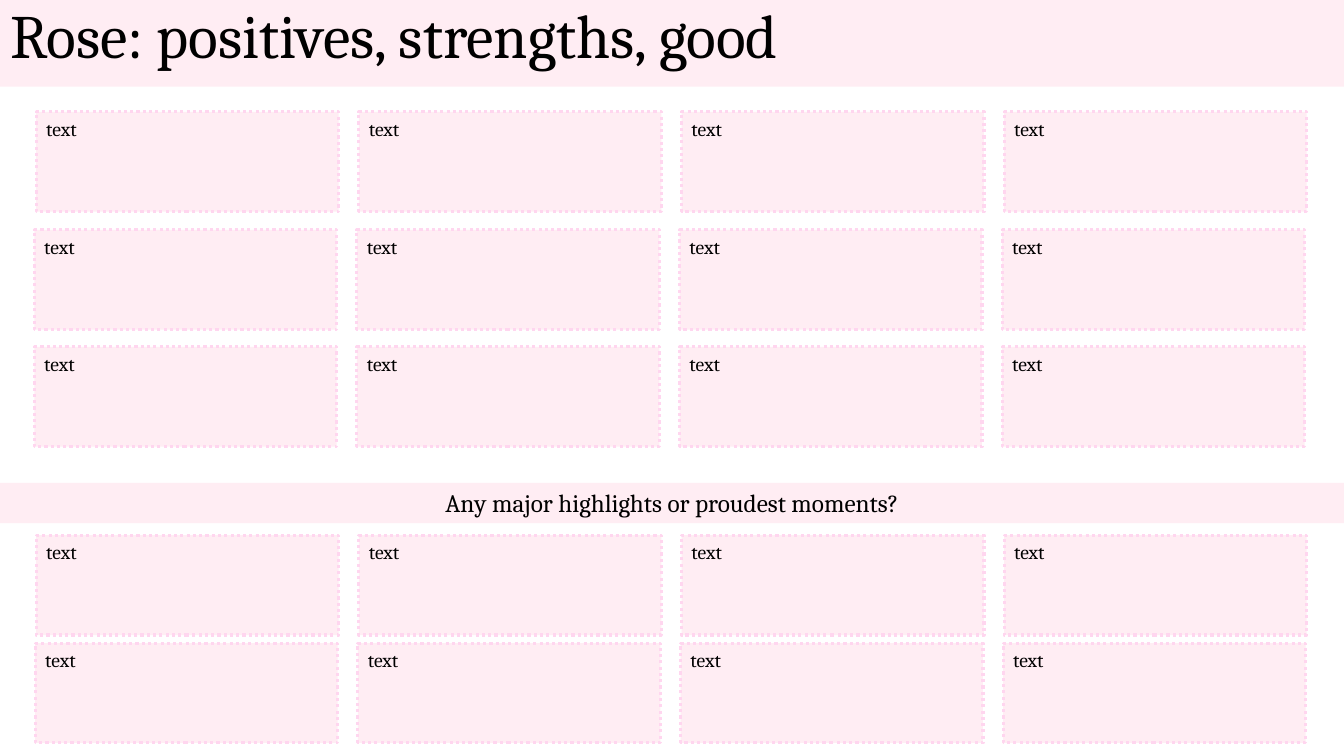
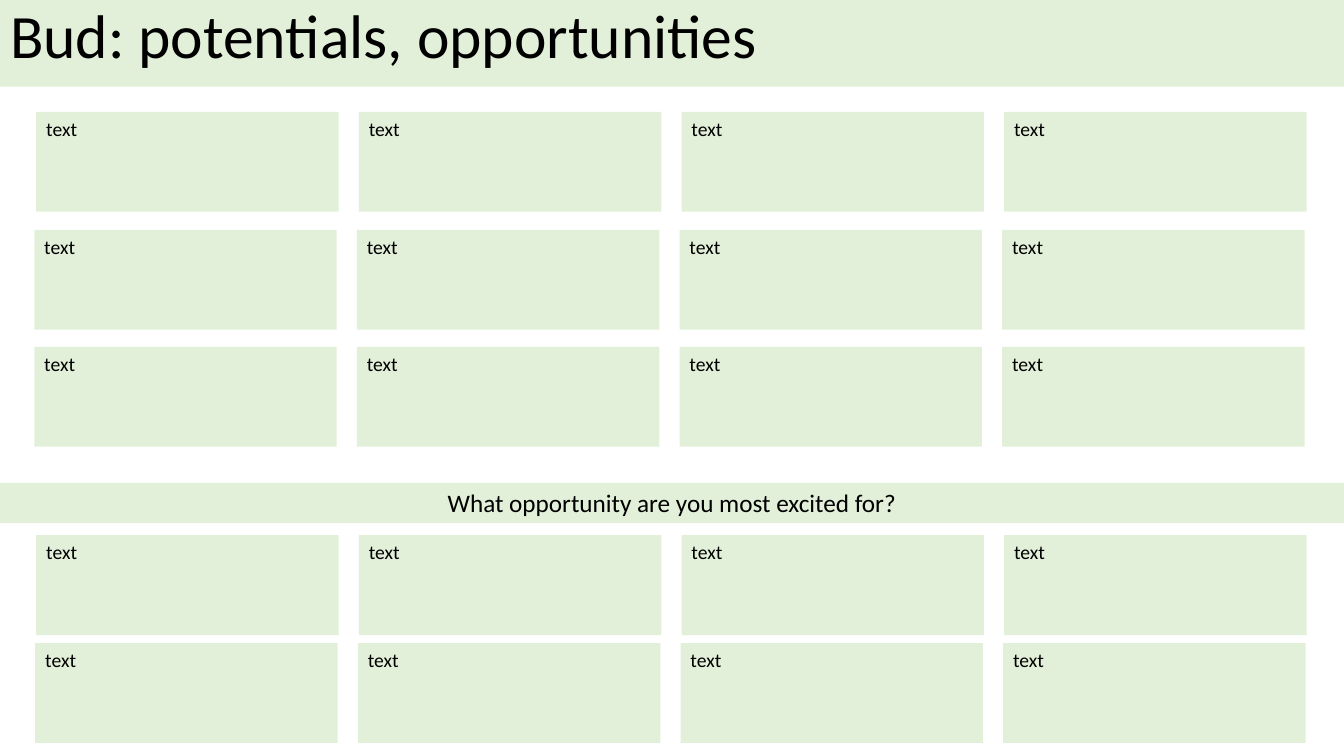
from dataclasses import dataclass

from pptx import Presentation
from pptx.dml.color import RGBColor
from pptx.enum.dml import MSO_LINE
from pptx.enum.shapes import MSO_SHAPE
from pptx.enum.text import MSO_ANCHOR, MSO_AUTO_SIZE, PP_ALIGN
from pptx.presentation import Presentation as PresentationType
from pptx.shapes.autoshape import Shape
from pptx.slide import Slide
from pptx.util import Inches, Pt

COLORS = {
    "text": "000000",
    "rose": "FFEDF3",
    "rose_border": "FFD6EF",
    "bud": "E2F0D9",
}
SLIDE_WIDTH, SLIDE_HEIGHT = 13.33, 7.5
TITLE_HEIGHT = 0.86
QUESTION_TOP, QUESTION_HEIGHT = 4.79, 0.4
CARD_WIDTH, CARD_HEIGHT = 3, 0.99
COLUMN_COUNT, COLUMN_STEP = 4, 3.2
TITLE_ONLY_LAYOUT = 5


@dataclass(frozen=True)
class CardRow:
    left: float
    top: float


@dataclass(frozen=True)
class Board:
    title: str
    question: str
    font: str
    fill: str
    border: str | None = None


IDEA_ROWS = [CardRow(0.36, 1.11), CardRow(0.34, 2.28), CardRow(0.34, 3.44)]
ANSWER_ROWS = [CardRow(0.36, 5.31), CardRow(0.35, 6.38)]
BOARDS = [
    Board(
        "Rose: positives, strengths, good",
        "Any major highlights or proudest moments?",
        "Cambria",
        "rose",
        "rose_border",
    ),
    Board(
        "Bud: potentials, opportunities",
        "What opportunity are you most excited for?",
        "Calibri",
        "bud",
    ),
]


def color(name: str) -> RGBColor:
    return RGBColor.from_string(COLORS[name])


def place(shape: Shape, left: float, top: float, width: float, height: float) -> None:
    shape.left, shape.top = Inches(left), Inches(top)
    shape.width, shape.height = Inches(width), Inches(height)


def write(
    shape: Shape,
    board: Board,
    text: str,
    size: int,
    alignment: PP_ALIGN = PP_ALIGN.LEFT,
    line_spacing: float = 1.0,
) -> None:
    shape.fill.solid()
    shape.fill.fore_color.rgb = color(board.fill)
    frame = shape.text_frame
    frame.word_wrap = True
    frame.auto_size = MSO_AUTO_SIZE.NONE
    frame.vertical_anchor = MSO_ANCHOR.TOP
    paragraph = frame.paragraphs[0]
    paragraph.alignment = alignment
    paragraph.line_spacing = line_spacing
    run = paragraph.add_run()
    run.text = text
    run.font.name = board.font
    run.font.size = Pt(size)
    run.font.color.rgb = color("text")


def add_title(slide: Slide, board: Board) -> None:
    title = slide.shapes.title
    place(title, 0, 0, SLIDE_WIDTH, TITLE_HEIGHT)
    write(title, board, board.title, 44, line_spacing=0.9)


def add_card_row(slide: Slide, board: Board, row: CardRow) -> None:
    for column in range(COLUMN_COUNT):
        card = slide.shapes.add_shape(
            MSO_SHAPE.RECTANGLE,
            Inches(row.left + column * COLUMN_STEP),
            Inches(row.top),
            Inches(CARD_WIDTH),
            Inches(CARD_HEIGHT),
        )
        card.shadow.inherit = False
        write(card, board, "text", 14)
        if board.border:
            card.line.color.rgb = color(board.border)
            card.line.width = Pt(2.25)
            card.line.dash_style = MSO_LINE.ROUND_DOT
        else:
            card.line.fill.background()


def add_question(slide: Slide, board: Board) -> None:
    band = slide.shapes.add_textbox(
        Inches(0), Inches(QUESTION_TOP), Inches(SLIDE_WIDTH), Inches(QUESTION_HEIGHT)
    )
    write(band, board, board.question, 18, PP_ALIGN.CENTER)
    band.text_frame.auto_size = MSO_AUTO_SIZE.SHAPE_TO_FIT_TEXT


def add_board(presentation: PresentationType, board: Board) -> None:
    layout = presentation.slide_layouts[TITLE_ONLY_LAYOUT]
    slide = presentation.slides.add_slide(layout)
    add_title(slide, board)
    for row in IDEA_ROWS:
        add_card_row(slide, board, row)
    add_question(slide, board)
    for row in ANSWER_ROWS:
        add_card_row(slide, board, row)


def main() -> None:
    presentation = Presentation()
    presentation.slide_width = Inches(SLIDE_WIDTH)
    presentation.slide_height = Inches(SLIDE_HEIGHT)
    for board in BOARDS:
        add_board(presentation, board)
    presentation.save("out.pptx")


if __name__ == "__main__":
    main()
